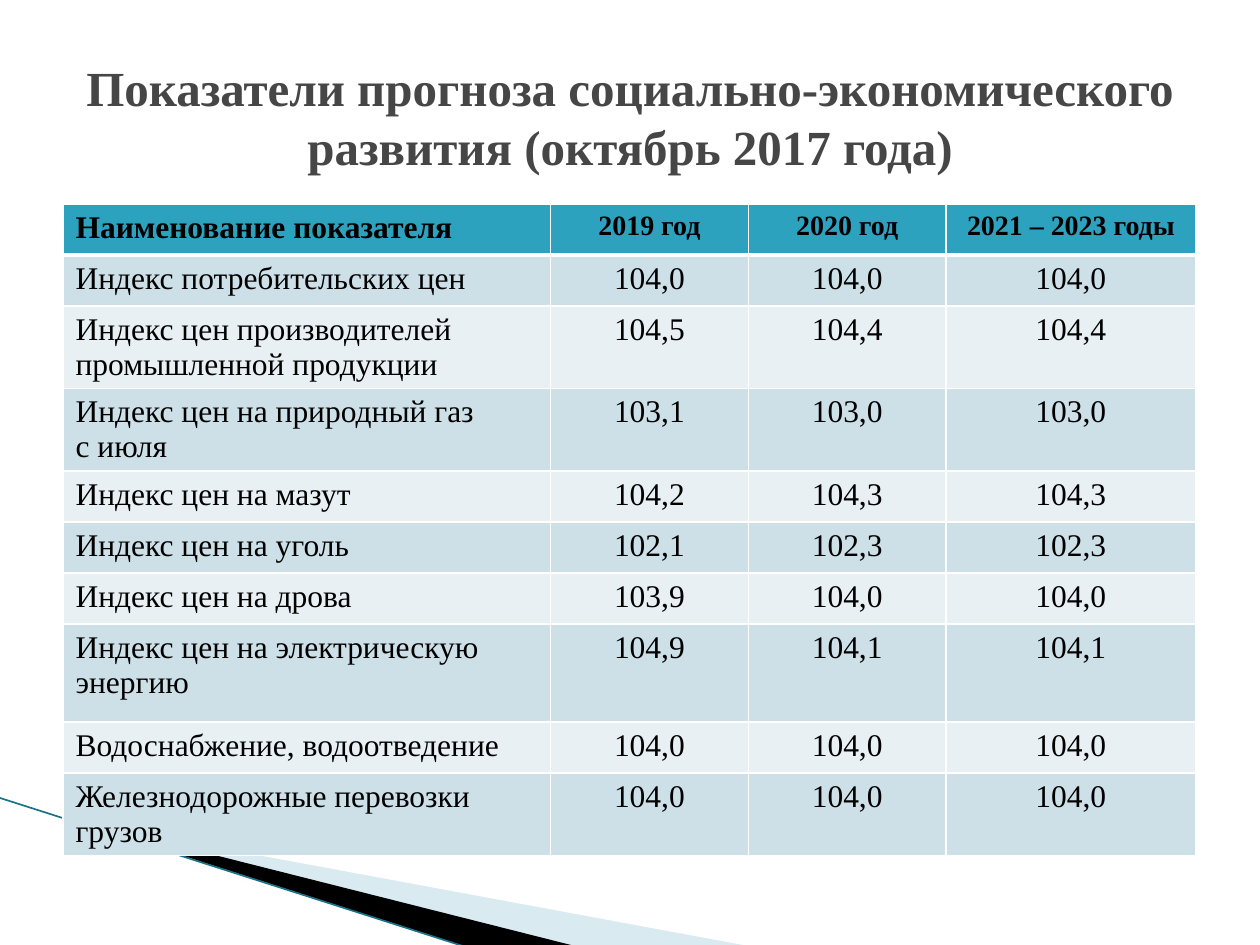
from dataclasses import dataclass

from lxml import etree
from pptx import Presentation
from pptx.dml.color import RGBColor
from pptx.enum import shapes, text
from pptx.oxml import ns
from pptx.util import Inches, Pt


@dataclass(frozen=True)
class Theme:
    font: str = "Times New Roman"
    title: str = "464646"
    ink: str = "000000"
    header: str = "2DA2BF"
    bands: tuple[str, str] = ("CDE0E8", "E8F0F4")
    border: str = "FFFFFF"
    pale: str = "A0CBDC"
    line: str = "1A7288"
    title_size: int = 28
    body_size: int = 18
    year_size: int = 16


@dataclass(frozen=True)
class Wedge:
    points: tuple[tuple[float, float], ...]
    color: str
    alpha: int = 100


@dataclass(frozen=True)
class Row:
    name: str
    values: tuple[str, ...]
    height: float = 0.405


T = Theme()
WEDGES = (
    Wedge(((0.55, 6.51), (5.95, 7.51), (4.56, 7.51), (0.55, 6.5)), T.pale, 40),
    Wedge(((0.53, 6.49), (4.57, 7.51), (3.72, 7.52), (0.54, 6.5)), T.ink),
)
COLUMNS = (3.87, 1.57, 1.57, 1.98)
ROWS = (
    Row("Наименование показателя", ("2019 год", "2020 год", "2021 – 2023 годы")),
    Row("Индекс потребительских цен", ("104,0", "104,0", "104,0")),
    Row("Индекс цен производителей промышленной продукции", ("104,5", "104,4", "104,4")),
    Row("Индекс цен на природный газ\nс июля", ("103,1", "103,0", "103,0")),
    Row("Индекс цен на мазут", ("104,2", "104,3", "104,3")),
    Row("Индекс цен на уголь", ("102,1", "102,3", "102,3")),
    Row("Индекс цен на дрова", ("103,9", "104,0", "104,0")),
    Row("Индекс цен на электрическую энергию", ("104,9", "104,1", "104,1"), 0.78),
    Row("Водоснабжение, водоотведение", ("104,0", "104,0", "104,0")),
    Row("Железнодорожные перевозки грузов", ("104,0", "104,0", "104,0")),
)


def format_text(tf, size: int, color: str, bold: bool, align) -> None:
    for p in tf.paragraphs:
        p.alignment = align
        for r in p.runs:
            r.font.name, r.font.size, r.font.bold = T.font, Pt(size), bold
            r.font.color.rgb = RGBColor.from_string(color)


def draw_wedge(s, wedge: Wedge) -> None:
    first, *rest = [(Inches(x), Inches(y)) for x, y in wedge.points]
    fb = s.shapes.build_freeform(*first)
    fb.add_line_segments(rest, close=True)
    sp = fb.convert_to_shape()
    sp.shadow.inherit = False
    sp.line.fill.background()
    sp.fill.solid()
    sp.fill.fore_color.rgb = RGBColor.from_string(wedge.color)
    if wedge.alpha < 100:
        color = sp.fill._xPr.find(".//" + ns.qn("a:srgbClr"))
        etree.SubElement(color, ns.qn("a:alpha"), val=str(wedge.alpha * 1000))


def draw_line(s) -> None:
    line = s.shapes.add_connector(shapes.MSO_CONNECTOR.STRAIGHT,
                                  Inches(-0.01), Inches(6.33), Inches(3.71), Inches(7.52))
    line.line.color.rgb = RGBColor.from_string(T.line)
    line.line.width = Pt(0.95)
    etree.SubElement(line._element.spPr, ns.qn("a:effectLst"))


def set_borders(cell, top: int, bottom: int) -> None:
    tcPr = cell._tc.get_or_add_tcPr()
    widths = {"lnL": 1, "lnR": 1, "lnT": top, "lnB": bottom}
    for i, (tag, width) in enumerate(widths.items()):
        ln = etree.Element(ns.qn("a:" + tag), w=str(Pt(width)))
        fill = etree.SubElement(ln, ns.qn("a:solidFill"))
        etree.SubElement(fill, ns.qn("a:srgbClr"), val=T.border)
        tcPr.insert(i, ln)


def draw_table(s, rows: tuple[Row, ...]) -> None:
    height = sum(row.height for row in rows)
    tbl = s.shapes.add_table(len(rows), len(COLUMNS), Inches(0.5), Inches(1.62),
                             Inches(sum(COLUMNS)), Inches(height)).table
    for column, width in zip(tbl.columns, COLUMNS):
        column.width = Inches(width)
    for i, row in enumerate(rows):
        tbl.rows[i].height = Inches(row.height)
        header = i == 0
        for j, value in enumerate((row.name, *row.values)):
            cell = tbl.cell(i, j)
            cell.text_frame.text = value
            size = T.year_size if header and j else T.body_size
            align = text.PP_ALIGN.CENTER if j else text.PP_ALIGN.LEFT
            format_text(cell.text_frame, size, T.ink, header, align)
            cell.fill.solid()
            cell.fill.fore_color.rgb = RGBColor.from_string(
                T.header if header else T.bands[(i - 1) % 2])
            set_borders(cell, 3 if i == 1 else 1, 3 if header else 1)


def draw_title(s) -> None:
    sp = s.shapes.title
    sp.left, sp.top, sp.width, sp.height = map(Inches, (0.5, 0.3, 9, 1.25))
    tf = sp.text_frame
    tf.text = "Показатели прогноза социально-экономического развития (октябрь 2017 года)"
    tf.word_wrap = True
    tf.vertical_anchor = text.MSO_ANCHOR.MIDDLE
    format_text(tf, T.title_size, T.title, True, text.PP_ALIGN.CENTER)


def main() -> None:
    prs = Presentation()
    prs.slide_width, prs.slide_height = Inches(10), Inches(7.5)
    s = prs.slides.add_slide(prs.slide_layouts[5])

    # Corner decoration
    for wedge in WEDGES:
        draw_wedge(s, wedge)
    draw_line(s)

    # Title and forecast table
    draw_title(s)
    draw_table(s, ROWS)
    prs.save("out.pptx")


if __name__ == "__main__":
    main()
